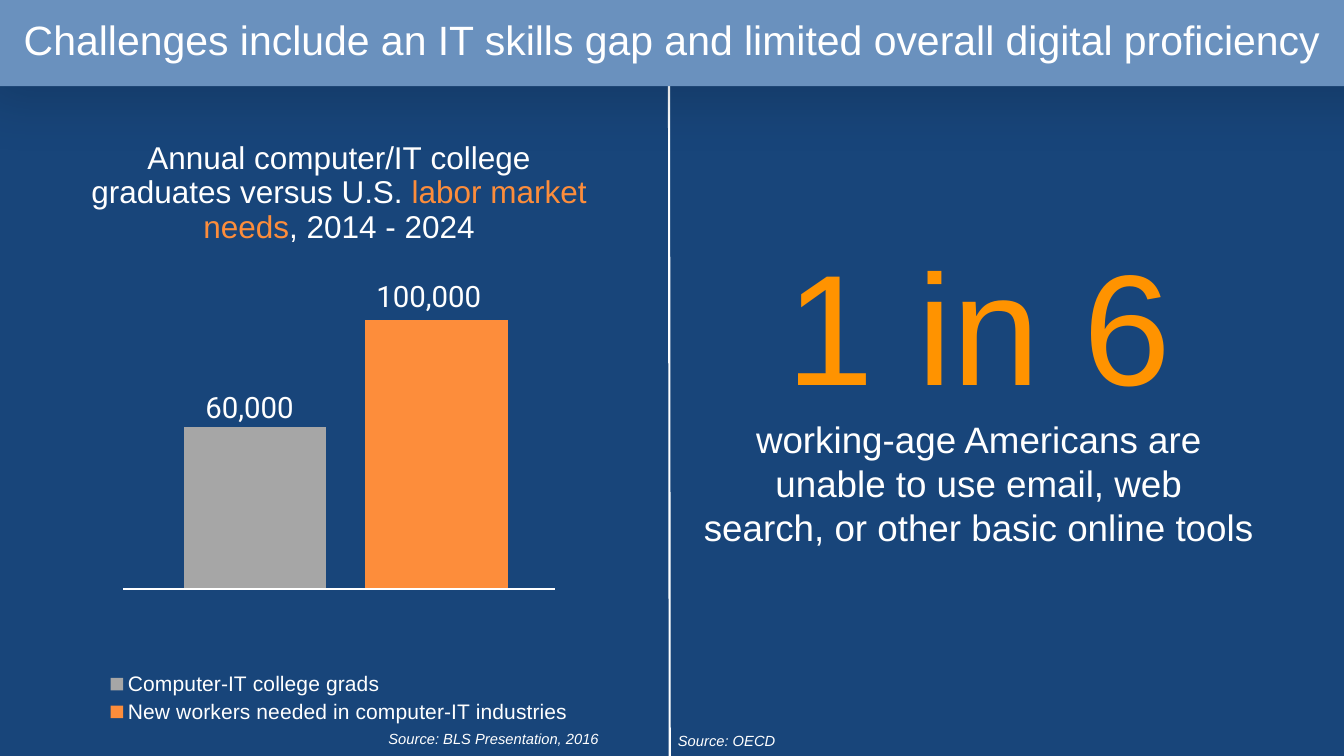
from lxml.etree import SubElement
from pptx import Presentation
from pptx.chart.data import CategoryChartData
from pptx.dml.color import RGBColor
from pptx.enum.chart import XL_CHART_TYPE, XL_LEGEND_POSITION
from pptx.enum.shapes import MSO_CONNECTOR, MSO_SHAPE
from pptx.enum.text import MSO_ANCHOR, MSO_AUTO_SIZE, PP_ALIGN
from pptx.oxml import parse_xml
from pptx.oxml.ns import nsdecls, qn
from pptx.util import Inches, Pt

COLORS = {
    "navy": "18457A",
    "banner": "6A91BE",
    "white": "FFFFFF",
    "gray": "A6A6A6",
    "orange": "FD8D3B",
    "amber": "FF9300",
}
WIDTH, HEIGHT = 17.78, 10


def rgb(name):
    return RGBColor.from_string(COLORS[name])


def style(font, size, color="white", name="Arial", italic=None):
    font.size = Pt(size)
    font.name = name
    font.color.rgb = rgb(color)
    font.bold = False
    font.italic = italic


def add_text(s, box, lines, align=None, anchor=None, inset=None, **look):
    tf = s.shapes.add_textbox(*map(Inches, box)).text_frame
    tf.word_wrap = True
    tf.auto_size = MSO_AUTO_SIZE.SHAPE_TO_FIT_TEXT
    if anchor is not None:
        tf.vertical_anchor = anchor
    if inset is not None:
        tf.margin_left = tf.margin_right = Inches(inset)
        tf.margin_top = tf.margin_bottom = Inches(inset)
    for i, (text, size, color) in enumerate(lines):
        p = tf.add_paragraph() if i else tf.paragraphs[0]
        p.text = text
        p.alignment = align
        style(p.font, size, color, **look)


def add_line(s, x1, y1, x2, y2):
    line = s.shapes.add_connector(MSO_CONNECTOR.STRAIGHT, *map(Inches, (x1, y1, x2, y2)))
    line.line.color.rgb = rgb("white")
    line.line.width = Pt(2)
    SubElement(line._element.spPr, qn("a:effectLst"))


def add_banner(s, left, top, width, height):
    sp = s.shapes.add_shape(MSO_SHAPE.RECTANGLE, *map(Inches, (left, top, width, height)))
    sp.fill.solid()
    sp.fill.fore_color.rgb = rgb("banner")
    sp.line.fill.background()
    sp._element.spPr.append(parse_xml(
        f'<a:effectLst {nsdecls("a")}>'
        f'<a:outerShdw blurRad="{Pt(52)}" dist="{Pt(14.7)}" dir="5400000" rotWithShape="0">'
        '<a:srgbClr val="000000"><a:alpha val="14000"/></a:srgbClr>'
        '</a:outerShdw></a:effectLst>'))
    title = "Challenges include an IT skills gap and limited overall digital proficiency"
    add_text(s, (0, top + 0.26, WIDTH, 0.73), [(title, 39, "white")],
             PP_ALIGN.CENTER, MSO_ANCHOR.MIDDLE, 0.04)


def set_plot_layout(chart, x, y, w, h):
    plot_area = chart._chartSpace.chart.plotArea
    for old in plot_area.findall(qn("c:layout")):
        plot_area.remove(old)
    plot_area.insert(0, parse_xml(
        f'<c:layout {nsdecls("c")}><c:manualLayout><c:layoutTarget val="inner"/>'
        '<c:xMode val="edge"/><c:yMode val="edge"/>'
        f'<c:x val="{x}"/><c:y val="{y}"/><c:w val="{w}"/><c:h val="{h}"/>'
        '</c:manualLayout></c:layout>'))


def add_skills_chart(s, left, top, width, height):
    data = CategoryChartData()
    data.categories = ["1"]
    data.add_series("Computer-IT college grads", [60])
    data.add_series("New workers needed in computer-IT industries", [100])
    chart = s.shapes.add_chart(XL_CHART_TYPE.COLUMN_CLUSTERED,
                               *map(Inches, (left, top, width, height)), data).chart
    style(chart.font, 10, name="Roboto")

    chart.has_title = True
    p = chart.chart_title.text_frame.paragraphs[0]
    for text, color in [("Annual computer/IT college graduates versus U.S. ", "white"),
                        ("labor market needs", "orange"),
                        (", 2014 - 2024", "white")]:
        r = p.add_run()
        r.text = text
        style(r.font, 30, color)
    chart.chart_title.include_in_layout = False

    chart.has_legend = True
    chart.legend.position = XL_LEGEND_POSITION.BOTTOM
    chart.legend.include_in_layout = False
    style(chart.legend.font, 20)

    axis = chart.value_axis
    axis.minimum_scale, axis.maximum_scale = 0, 120
    axis.has_major_gridlines = False
    axis.visible = chart.category_axis.visible = False

    plot = chart.plots[0]
    plot.gap_width, plot.overlap, plot.vary_by_categories = 219, -27, False
    for series, color in zip(plot.series, ("gray", "orange")):
        series.format.fill.solid()
        series.format.fill.fore_color.rgb = rgb(color)
    set_plot_layout(chart, 0.03, 0.24, 0.96, 0.53)


def add_skills_panel(s, left, top, width, height):
    add_skills_chart(s, left, top, width, height)
    for text, x, y, w in [("60,000", 2.52, 3.5, 1.67), ("100,000", 4.78, 2.03, 1.97)]:
        add_text(s, (left + x, top + y, w, 0.57), [(text, 28, "white")], name="Roboto")
    add_line(s, left + 1.53, top + 6.19, left + 7.24, top + 6.19)
    add_source(s, left + 4.94, top + 8.01, "Source: BLS Presentation, 2016")


def add_source(s, left, top, text):
    add_text(s, (left, top, 3.81, 0.34), [(text, 14, "white")], italic=True)


def add_proficiency_panel(s, left, top, width, height):
    lines = [("1 in 6", 150, "amber"),
             ("working-age Americans are unable to use email, web", 35, "white"),
             ("search, or other basic online tools", 35, "white")]
    add_text(s, (left + 0.29, top + 1.34, 7.58, 4.4), lines,
             PP_ALIGN.CENTER, MSO_ANCHOR.MIDDLE, 0.06)
    add_source(s, left, top + 8.03, "Source: OECD")


def main():
    prs = Presentation()
    prs.slide_width, prs.slide_height = Inches(WIDTH), Inches(HEIGHT)
    s = prs.slides.add_slide(prs.slide_layouts[6])
    s.background.fill.solid()
    s.background.fill.fore_color.rgb = rgb("navy")
    add_line(s, 8.86, HEIGHT, 8.85, 0.73)
    add_skills_panel(s, 0.1, 1.6, 8.77, 8.03)
    add_banner(s, -0.21, -0.11, 18.62, 1.25)
    add_proficiency_panel(s, 8.87, 1.6, 8.91, 8.4)
    prs.save("out.pptx")


if __name__ == "__main__":
    main()
